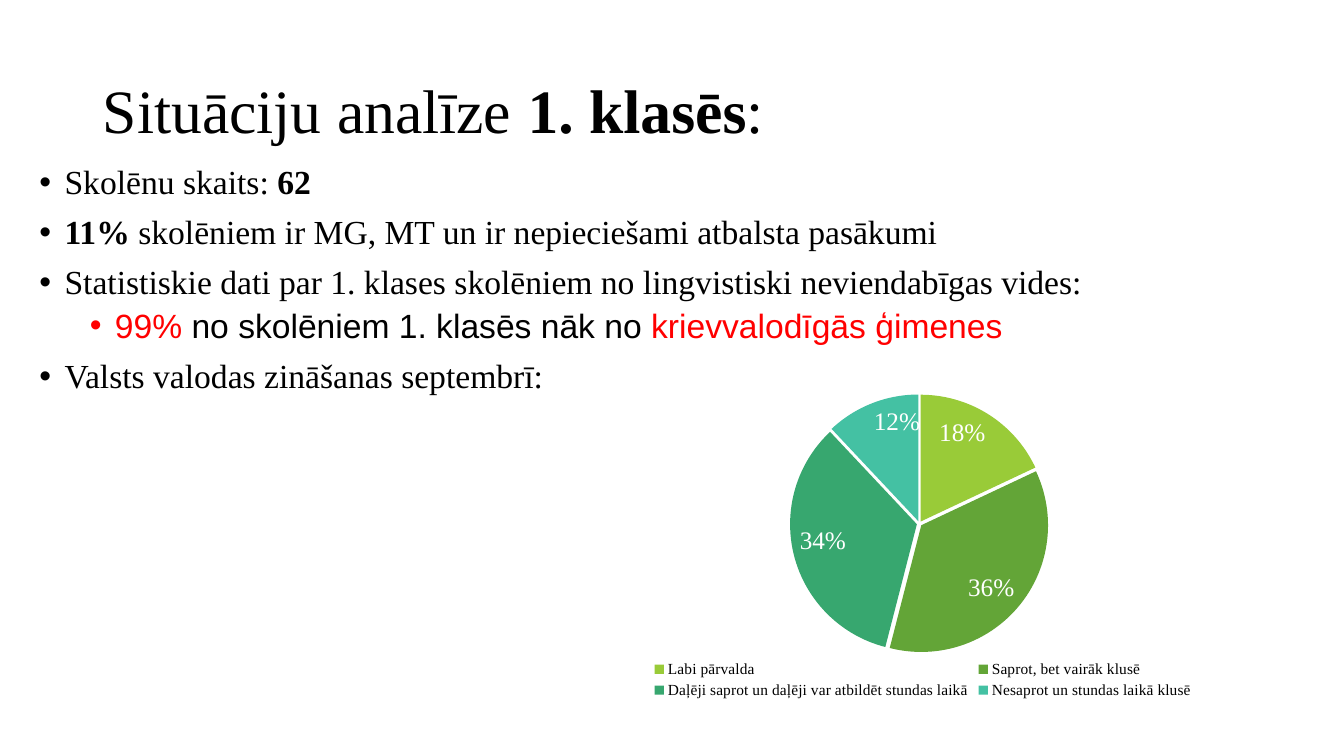
from lxml import etree
from pptx import Presentation
from pptx.chart.data import CategoryChartData
from pptx.dml.color import RGBColor
from pptx.enum.chart import XL_CHART_TYPE, XL_LABEL_POSITION, XL_LEGEND_POSITION
from pptx.enum.text import MSO_ANCHOR, PP_ALIGN
from pptx.oxml import parse_xml
from pptx.oxml.ns import nsdecls, qn
from pptx.util import Inches, Pt

PIE = XL_CHART_TYPE.PIE
INSIDE_END = XL_LABEL_POSITION.INSIDE_END
BOTTOM = XL_LEGEND_POSITION.BOTTOM
MIDDLE, TOP = MSO_ANCHOR.MIDDLE, MSO_ANCHOR.TOP
LEFT = PP_ALIGN.LEFT
SERIF = "Times New Roman"
BLACK, RED, WHITE = "000000", "FF0000", "FFFFFF"


def style_font(font, size, color=BLACK, name=SERIF, bold=False):
    font.size = Pt(size)
    font.name = name
    font.bold = bold
    font.color.rgb = RGBColor.from_string(color)


def add_run(p, text, **fmt):
    r = p.add_run()
    r.text = text
    style_font(r.font, **fmt)


prs = Presentation()
prs.slide_width, prs.slide_height = Inches(13.33), Inches(7.5)
s = prs.slides.add_slide(prs.slide_layouts[1])
title, body = s.placeholders

for sp, box, anchor in [
    (title, (0.92, 0.4, 11.5, 1.45), MIDDLE),
    (body, (0.29, 1.59, 12.12, 5.17), TOP),
]:
    sp.left, sp.top, sp.width, sp.height = map(Inches, box)
    sp.text_frame.vertical_anchor = anchor

p = title.text_frame.paragraphs[0]
p.alignment = LEFT
p.line_spacing = 0.9
for text, bold in [("Situāciju analīze ", False), ("1. klasēs", True), (":", False)]:
    add_run(p, text, size=44, bold=bold)

bold = {"bold": True}
sans = {"name": "Arial"}
sans_red = {"name": "Arial", "color": RED}
bullets = [
    (0, [("Skolēnu skaits: ", {}), ("62", bold)]),
    (0, [("11% ", bold), ("skolēniem ir MG, MT un ir nepieciešami atbalsta pasākumi", {})]),
    (0, [("Statistiskie dati par 1. klases skolēniem no lingvistiski neviendabīgas vides:", {})]),
    (1, [("99%", sans_red), (" no skolēniem 1. klasēs nāk no ", sans),
         ("krievvalodīgās ģimenes", sans_red)]),
    (0, [("Valsts valodas zināšanas septembrī:", {})]),
]
tf = body.text_frame
for i, (level, runs) in enumerate(bullets):
    p = tf.add_paragraph() if i else tf.paragraphs[0]
    p.level = level
    p.line_spacing = 0.9
    p.space_before = Pt(5 if level else 10)
    pPr = p._p.get_or_add_pPr()
    pPr.set("marL", str(Inches(0.25 + 0.5 * level)))
    pPr.set("indent", str(Inches(-0.25)))
    etree.SubElement(pPr, qn("a:buFont")).set("typeface", "Arial")
    etree.SubElement(pPr, qn("a:buChar")).set("char", "•")
    for text, fmt in runs:
        add_run(p, text, size=24, **fmt)

data = CategoryChartData(number_format="0%")
data.categories = [
    "Labi pārvalda",
    "Saprot, bet vairāk klusē",
    "Daļēji saprot un daļēji var atbildēt stundas laikā",
    "Nesaprot un stundas laikā klusē",
]
data.add_series("Series 1", (0.18, 0.36, 0.34, 0.12))
chart = s.shapes.add_chart(
    PIE, Inches(5.49), Inches(3.49), Inches(7.33), Inches(3.48), data
).chart
style_font(chart.font, 10, name="Calibri")
chart.has_title = False
chart.has_legend = True
legend = chart.legend
legend.position = BOTTOM
legend.include_in_layout = False
style_font(legend.font, 11)

plot = chart.plots[0]
plot.vary_by_categories = True
series = plot.series[0]
for i, color in enumerate(["99CB38", "63A537", "37A76F", "44C1A3"]):
    fill = series.points[i].format.fill
    fill.solid()
    fill.fore_color.rgb = RGBColor.from_string(color)
series._element.find(qn("c:dPt")).addprevious(
    parse_xml(f'<c:explosion {nsdecls("c")} val="2"/>')
)
labels = series.data_labels
labels.show_value = True
labels.show_percentage = False
labels.number_format = "0%"
labels.number_format_is_linked = False
labels.position = INSIDE_END
style_font(labels.font, 18, WHITE)

plot_area = chart._chartSpace.chart.plotArea
for layout in plot_area.findall(qn("c:layout")):
    plot_area.remove(layout)
frame = {"x": 0.32, "y": 0.12, "w": 0.35, "h": 0.74}
sizes = "".join(f'<c:{key} val="{val}"/>' for key, val in frame.items())
plot_area.insert(0, parse_xml(
    f'<c:layout {nsdecls("c")}><c:manualLayout><c:layoutTarget val="inner"/>'
    f'<c:xMode val="edge"/><c:yMode val="edge"/>{sizes}</c:manualLayout></c:layout>'
))

prs.save("out.pptx")
